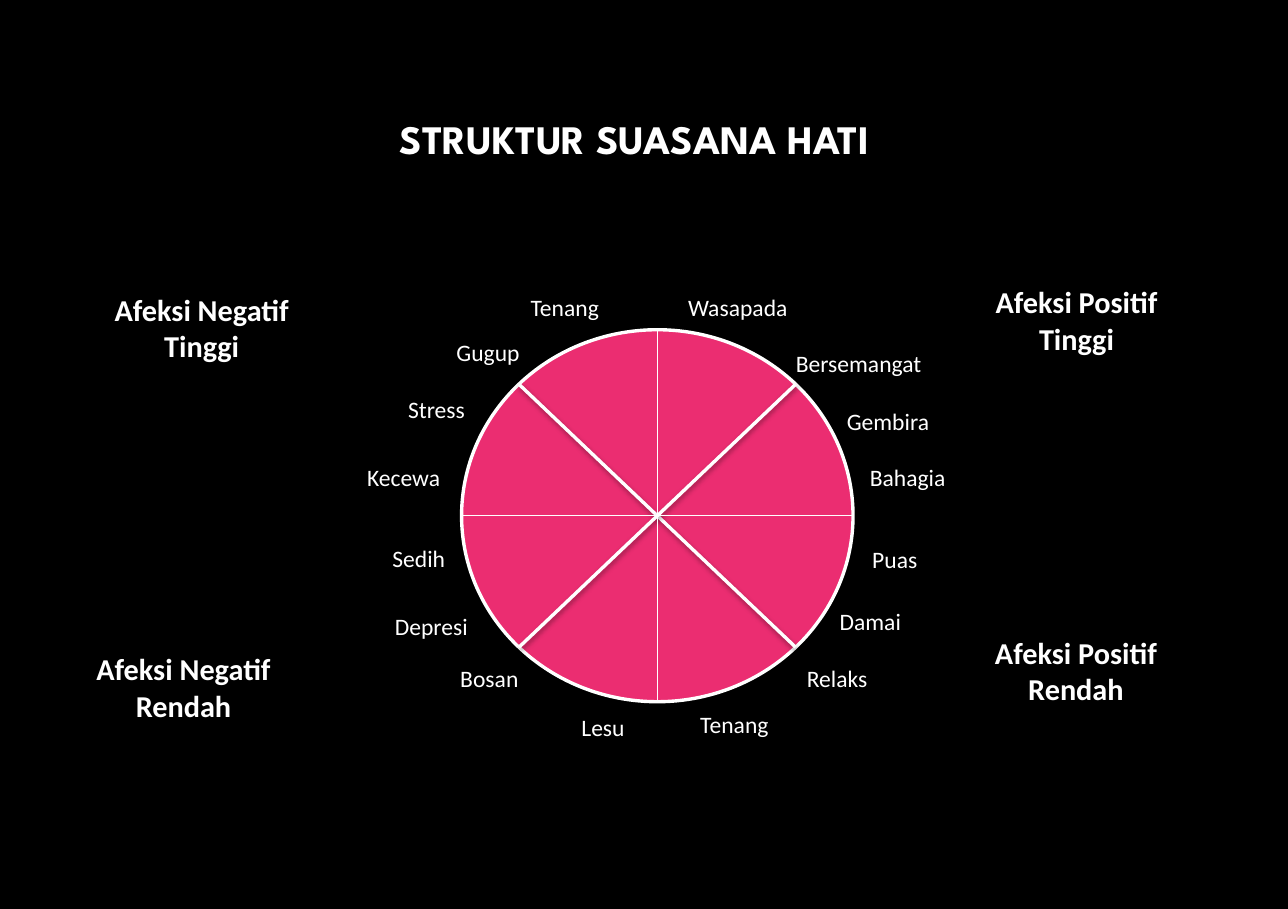
from math import cos, radians, sin

from lxml.etree import SubElement
from pptx import Presentation
from pptx.dml.color import RGBColor
from pptx.enum.shapes import MSO_CONNECTOR, MSO_SHAPE
from pptx.enum.text import MSO_ANCHOR, MSO_AUTO_SIZE, PP_ALIGN
from pptx.oxml.ns import qn
from pptx.util import Pt

BLACK, WHITE, PINK = "000000", "FFFFFF", "EB2D71"

TITLE_FONT = {"name": "League Spartan", "size": Pt(24), "bold": True}
MOOD_FONT = {"name": "Calibri", "size": Pt(14), "bold": False}
AFFECT_FONT = {"name": "Calibri", "size": Pt(18), "bold": True}

# Wheel centre and radii, in points
CENTRE_X, CENTRE_Y = 390.6, 306.4
RADIUS_X, RADIUS_Y = 116.3, 110.5

# Text, left, top, width
MOODS = [
    ("Tenang", 308.2, 170.6, 55.4),
    ("Gugup", 264.2, 197.3, 52.6),
    ("Stress", 235.4, 231.1, 49),
    ("Kecewa", 211, 271.4, 58.3),
    ("Wasapada", 401.8, 170.6, 74.2),
    ("Bersemangat", 465.8, 203.8, 90),
    ("Gembira", 496.1, 238.3, 64.1),
    ("Bahagia", 509.8, 271.4, 59.8),
    ("Puas", 511.2, 320.4, 41.8),
    ("Damai", 491.8, 357.1, 51.1),
    ("Relaks", 472.3, 391, 54),
    ("Tenang", 409, 418.3, 55.4),
    ("Sedih", 226.1, 319.7, 46.1),
    ("Depresi", 227.5, 360, 58.3),
    ("Bosan", 266.4, 391, 49.7),
    ("Lesu", 338.4, 419.8, 40.3),
]
AFFECTS = [
    ("Afeksi Negatif\nTinggi", 58.3, 169.2, 123.1),
    ("Afeksi Negatif\nRendah", 43.9, 383, 130.3),
    ("Afeksi Positif\nTinggi", 565.9, 164.9, 147.6),
    ("Afeksi Positif\nRendah", 574.6, 373, 129.6),
]


def colour(target, value):
    target.rgb = RGBColor.from_string(value)


def paint(fill, value):
    fill.solid()
    colour(fill.fore_color, value)


def set_format(target, values):
    for name, value in values.items():
        setattr(target, name, value)


def write(frame, text, font, align):
    frame.text = text
    for para in frame.paragraphs:
        para.alignment = align
        for span in para.runs:
            set_format(span.font, font)
            colour(span.font.color, WHITE)


def add_title(page, text):
    title = page.shapes.title
    set_format(title, {"left": Pt(230.4), "top": Pt(64.1),
                       "width": Pt(335.5), "height": Pt(36)})
    set_format(title.text_frame, {"word_wrap": True,
                                  "auto_size": MSO_AUTO_SIZE.NONE,
                                  "vertical_anchor": MSO_ANCHOR.TOP})
    write(title.text_frame, text, TITLE_FONT, PP_ALIGN.LEFT)


def add_label(page, text, left, top, width, height, font, align, wrap):
    box = page.shapes.add_textbox(Pt(left), Pt(top), Pt(width), Pt(height))
    set_format(box.text_frame, {"word_wrap": wrap,
                                "auto_size": MSO_AUTO_SIZE.SHAPE_TO_FIT_TEXT})
    write(box.text_frame, text, font, align)


def add_disc(page):
    disc = page.shapes.add_shape(
        MSO_SHAPE.OVAL, Pt(CENTRE_X - RADIUS_X), Pt(CENTRE_Y - RADIUS_Y),
        Pt(2 * RADIUS_X), Pt(2 * RADIUS_Y))
    disc.shadow.inherit = False
    paint(disc.fill, PINK)
    paint(disc.line.fill, WHITE)
    disc.line.width = Pt(2)


def add_diameter(page, angle, weight, shaded):
    across = RADIUS_X * cos(radians(angle))
    down = RADIUS_Y * sin(radians(angle))
    line = page.shapes.add_connector(
        MSO_CONNECTOR.STRAIGHT, Pt(CENTRE_X - across), Pt(CENTRE_Y - down),
        Pt(CENTRE_X + across), Pt(CENTRE_Y + down))
    paint(line.line.fill, WHITE)
    line.line.width = Pt(weight)
    effects = SubElement(line._element.spPr, qn("a:effectLst"))
    if shaded:
        shadow = SubElement(effects, qn("a:outerShdw"), blurRad=str(Pt(3.1)),
                            dist=str(Pt(1.6)), dir="5400000", rotWithShape="0")
        tint = SubElement(shadow, qn("a:srgbClr"), val=BLACK)
        SubElement(tint, qn("a:alpha"), val="38000")


def main():
    deck = Presentation()
    set_format(deck, {"slide_width": Pt(765.36), "slide_height": Pt(540)})
    page = deck.slides.add_slide(deck.slide_layouts[5])
    paint(page.background.fill, BLACK)
    add_title(page, "STRUKTUR SUASANA HATI")

    # Mood wheel
    add_disc(page)
    for angle in (45, 135):
        add_diameter(page, angle, 2, True)
    for angle in (90, 0):
        add_diameter(page, angle, 0.75, False)

    # Moods around the wheel and the four affect corners
    for mood in MOODS:
        add_label(page, *mood, 24.5, MOOD_FONT, PP_ALIGN.LEFT, False)
    for affect in AFFECTS:
        add_label(page, *affect, 51, AFFECT_FONT, PP_ALIGN.CENTER, True)

    deck.save("out.pptx")


if __name__ == "__main__":
    main()
